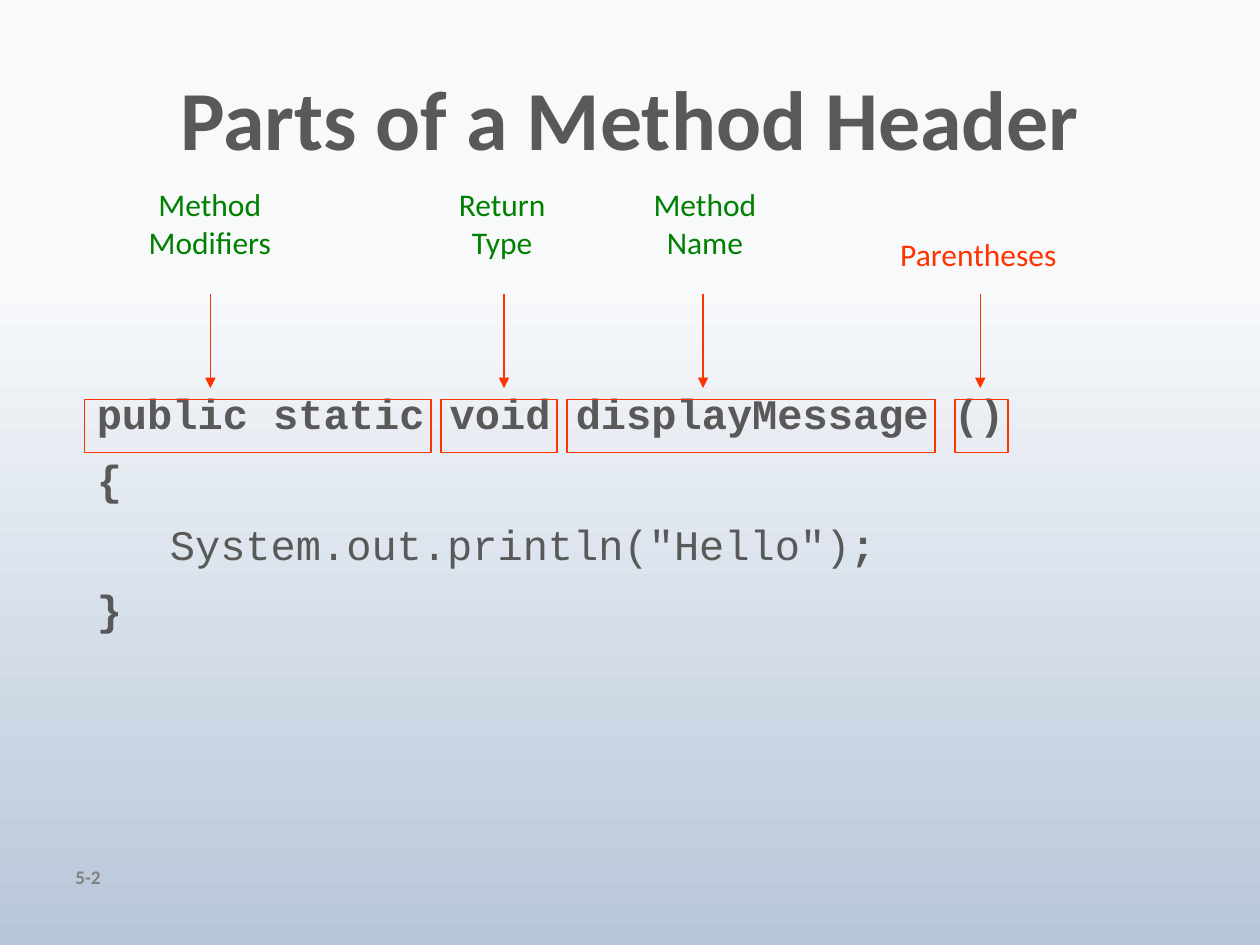
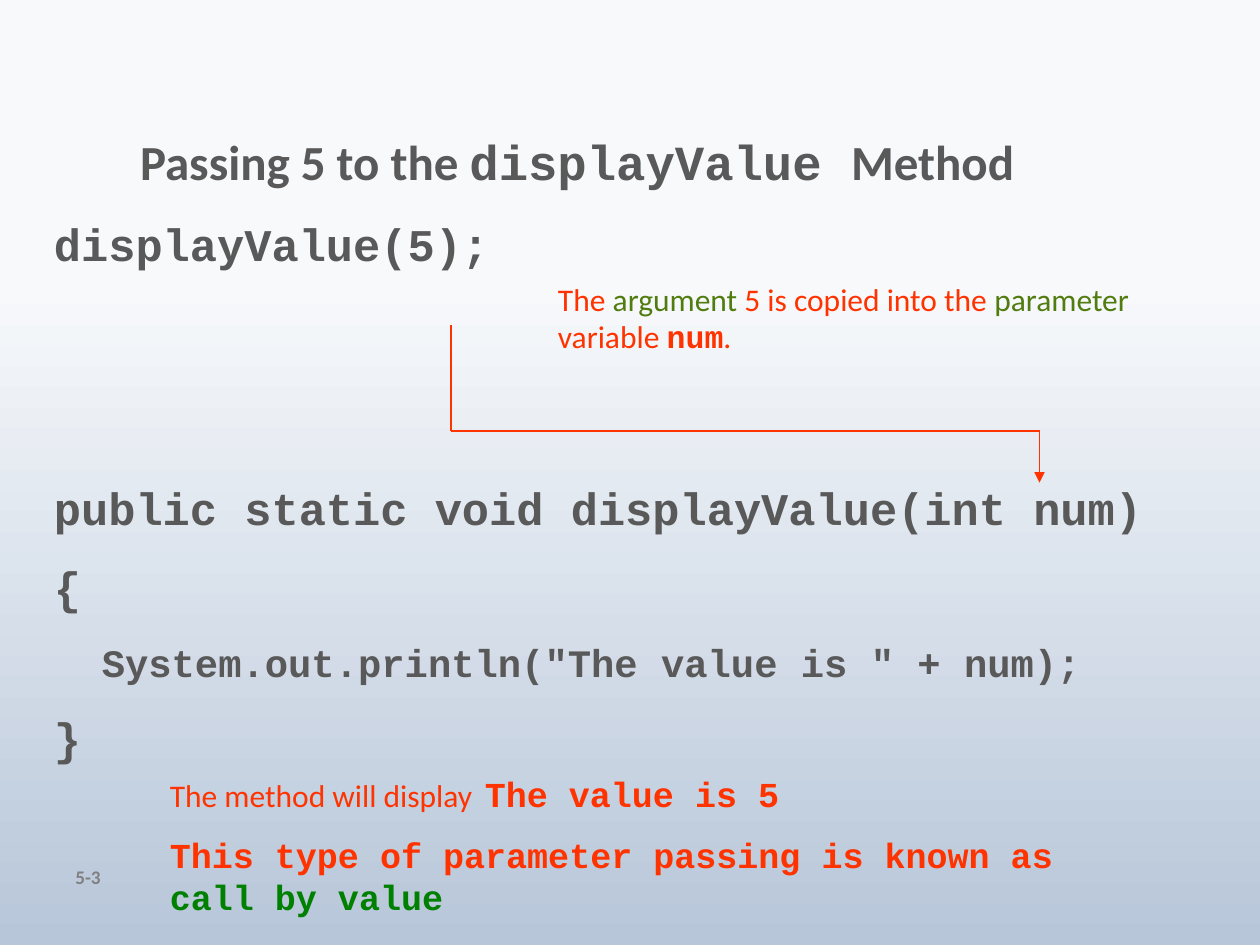
"""Builds two slides on Java method headers and passing arguments."""
from dataclasses import dataclass
from itertools import pairwise

from lxml.etree import SubElement
from pptx import Presentation
from pptx.dml.color import RGBColor
from pptx.enum.shapes import MSO_CONNECTOR as Connector, MSO_SHAPE as Preset
from pptx.enum.text import MSO_ANCHOR as Anchor, PP_ALIGN as Align
from pptx.oxml.ns import qn
from pptx.slide import Slide
from pptx.util import Inches, Pt

COLORS = {
    "sky": "F7F9FB",
    "haze": "B7C6D9",
    "ink": "595959",
    "number": "808080",
    "accent": "FF3300",
    "term": "008000",
    "olive": "517C0F",
}
SANS, MONO = "Calibri", "Courier New"
LINE_WIDTH = Pt(0.75)

Area = tuple[float, float, float, float]
Point = tuple[float, float]


@dataclass(frozen=True)
class Span:
    text: str
    size: float
    color: str = "ink"
    font: str = SANS
    bold: bool = False


@dataclass(frozen=True)
class Para:
    spans: list[Span]
    align: Align = Align.LEFT
    spacing: float | Pt | None = None
    before: float = 0
    indent: float = 0
    tab: float | None = None


@dataclass(frozen=True)
class HeaderPart:
    label: str
    label_color: str
    label_area: Area
    frame_left: float
    frame_width: float
    arrow_x: float


HEADER_PARTS = [
    HeaderPart("Method Modifiers", "term", (0.79, 1.42, 1.75, 0.71), 0.67, 2.75, 1.67),
    HeaderPart("Return Type", "term", (3.36, 1.42, 1.25, 0.71), 3.5, 0.92, 4),
    HeaderPart("Method Name", "term", (4.93, 1.42, 1.33, 0.71), 4.5, 2.92, 5.58),
    HeaderPart("Parentheses", "accent", (6.88, 1.82, 1.77, 0.5), 7.58, 0.42, 7.78),
]


def rgb(name: str) -> RGBColor:
    """Look up a named colour."""
    return RGBColor.from_string(COLORS[name])


def add_text(slide: Slide, area: Area, paras: list[Para], anchor: Anchor = Anchor.TOP) -> None:
    """Add a wrapped text box, run by run."""
    frame = slide.shapes.add_textbox(*map(Inches, area)).text_frame
    frame.word_wrap = True
    frame.vertical_anchor = anchor
    for index, para in enumerate(paras):
        line = frame.add_paragraph() if index else frame.paragraphs[0]
        line.alignment = para.align
        line.line_spacing = para.spacing
        line.space_before = Pt(para.before)
        properties = line._p.get_or_add_pPr()
        properties.set("marL", str(Inches(para.indent)))
        if para.tab:
            stops = SubElement(properties, qn("a:tabLst"))
            SubElement(stops, qn("a:tab"), pos=str(Inches(para.tab)), algn="l")
        for span in para.spans:
            run = line.add_run()
            run.text = span.text
            run.font.size = Pt(span.size)
            run.font.name = span.font
            run.font.bold = span.bold
            run.font.color.rgb = rgb(span.color)


def add_line(slide: Slide, start: Point, end: Point, arrow: bool = False) -> None:
    """Add a thin accent line, with an arrowhead at its end if asked."""
    line = slide.shapes.add_connector(Connector.STRAIGHT, *map(Inches, start + end))
    line.line.color.rgb = rgb("accent")
    line.line.width = LINE_WIDTH
    if arrow:
        SubElement(line.line._get_or_add_ln(), qn("a:tailEnd"), type="triangle")
    SubElement(line._element.spPr, qn("a:effectLst"))


def add_frame(slide: Slide, area: Area) -> None:
    """Outline one part of the code."""
    frame = slide.shapes.add_shape(Preset.RECTANGLE, *map(Inches, area))
    frame.shadow.inherit = False
    frame.fill.background()
    frame.line.color.rgb = rgb("accent")
    frame.line.width = LINE_WIDTH


def code_line(text: str, size: float, spacing: float, indent: float = 0,
              before: float = 20, bold: bool = True) -> Para:
    """Describe one line of source code."""
    return Para([Span(text, size, font=MONO, bold=bold)], spacing=spacing,
                before=before, indent=indent)


def start_slide(deck: Presentation, number: str, title_area: Area, title: list[Span]) -> Slide:
    """Add a slide with the shared background, number and title style."""
    slide = deck.slides.add_slide(deck.slide_layouts[6])
    fill = slide.background.fill
    fill.gradient()
    fill.gradient_angle = 270
    for stop, position, color in zip(fill.gradient_stops, (0.3, 1), ("sky", "haze")):
        stop.position = position
        stop.color.rgb = rgb(color)
    add_text(slide, (0.5, 6.81, 2.33, 0.3),
             [Para([Span(number, 11, "number", bold=True)])], Anchor.MIDDLE)
    add_text(slide, title_area, [Para(title, Align.CENTER, Pt(56))], Anchor.MIDDLE)
    return slide


def build_header_slide(deck: Presentation) -> None:
    """Show the named parts of a method header."""
    slide = start_slide(deck, "5-2", (1, 0.25, 8, 1.38),
                        [Span("Parts of a Method Header", 48, bold=True)])
    body = code_line('System.out.println("Hello")', 24, 0.6, 0.58, bold=False)
    body.spans.append(Span(";", 24, font=MONO, bold=True))
    add_text(slide, (0.67, 3.17, 8.5, 0.75), [
        code_line("public static void displayMessage ()", 24, 0.6),
        code_line("{", 24, 0.6),
        body,
        code_line("}", 24, 0.6),
    ])
    for part in HEADER_PARTS:
        add_frame(slide, (part.frame_left, 3.17, part.frame_width, 0.42))
        add_text(slide, part.label_area,
                 [Para([Span(part.label, 18, part.label_color)], Align.CENTER)])
        add_line(slide, (part.arrow_x, 2.33), (part.arrow_x, 3.08), arrow=True)


def build_passing_slide(deck: Presentation) -> None:
    """Show an argument being copied into a parameter."""
    slide = start_slide(deck, "5-3", (0.33, 0.5, 8.5, 1.25), [
        Span("Passing 5 to the ", 28, bold=True),
        Span("displayValue ", 28, font=MONO, bold=True),
        Span("Method", 28, bold=True),
    ])
    add_text(slide, (0.33, 1.75, 9.07, 4.44), [
        code_line("displayValue(5);", 25.9, 0.8),
        code_line("public static void displayValue(int num)", 25.9, 0.8, before=126),
        code_line("{", 25.9, 0.8),
        code_line('System.out.println("The value is " + num);', 22.2, 0.8, 0.38),
        code_line("}", 25.9, 0.8),
    ])
    add_text(slide, (4.33, 2.17, 4.75, 0.71), [Para([
        Span("The ", 18, "accent"),
        Span("argument", 18, "olive"),
        Span(" 5 is copied into the ", 18, "accent"),
        Span("parameter", 18, "olive"),
        Span(" variable ", 18, "accent"),
        Span("num", 18, "accent", MONO, True),
        Span(".", 18, "accent"),
    ])])
    route = [(3.58, 2.58), (3.58, 3.42), (8.25, 3.42), (8.25, 3.83)]
    for start, end in pairwise(route):
        add_line(slide, start, end, arrow=end == route[-1])
    add_text(slide, (1.25, 6.08, 7.33, 1.28), [
        Para([
            Span("The method will display\t", 18, "accent"),
            Span("The value is 5", 20, "accent", MONO, True),
        ], tab=2.5),
        Para([
            Span("This type of parameter passing is known as ", 20, "accent", MONO, True),
            Span("call by value", 20, "term", MONO, True),
        ], before=11),
    ])


def main() -> None:
    """Build and save the deck."""
    deck = Presentation()
    deck.slide_width, deck.slide_height = Inches(10), Inches(7.5)
    build_header_slide(deck)
    build_passing_slide(deck)
    deck.save("out.pptx")


if __name__ == "__main__":
    main()
